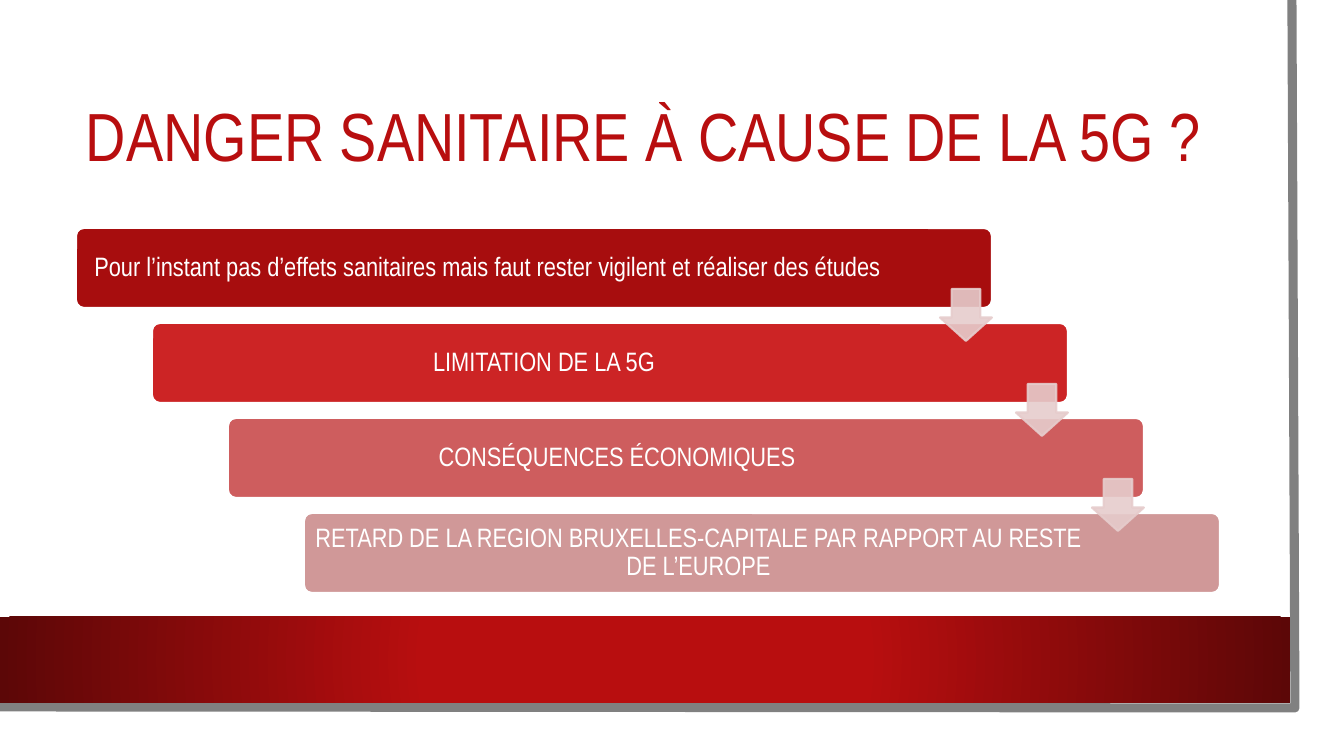
import lxml.etree
import pptx
import pptx.dml.color
import pptx.enum.shapes
import pptx.enum.text
import pptx.oxml
import pptx.oxml.ns
import pptx.util
from dataclasses import dataclass

MSO_SHAPE = pptx.enum.shapes.MSO_SHAPE
PP_ALIGN = pptx.enum.text.PP_ALIGN
EMU_PER_PX = 914400 / 100.8


@dataclass(frozen=True)
class Theme:
    font: str = "Arial Narrow"
    title_size: float = 48.6
    step_size: int = 19
    line_width: float = 1.5
    frame_width: float = 6.5
    red: str = "B80E0F"
    dark_red: str = "5C0707"
    white: str = "FFFFFF"
    grey: str = "808080"
    arrow: str = "E6CCCC"
    steps: tuple = ("A70D0E", "CC2425", "CE5D5E", "D09898")


theme = Theme()
rgb = pptx.dml.color.RGBColor.from_string
prs = pptx.Presentation()
prs.slide_width, prs.slide_height = (round(n * EMU_PER_PX) for n in (1344, 756))
s = prs.slides.add_slide(prs.slide_layouts[5])


def add_box(kind, x, y, w, h, fill, line=None, adj=()):
    sp = s.shapes.add_shape(kind, *(round(n * EMU_PER_PX) for n in (x, y, w, h)))
    sp.shadow.inherit = False
    sp.fill.solid()
    sp.fill.fore_color.rgb = rgb(fill)
    if line:
        sp.line.color.rgb = rgb(line)
        sp.line.width = pptx.util.Pt(theme.line_width)
    else:
        sp.line.fill.background()
    for i, value in enumerate(adj):
        sp.adjustments[i] = value
    return sp


def write(sp, text, *, size, color, align, margins):
    """Margins are left, top, right and bottom in px."""
    tf = sp.text_frame
    tf.word_wrap = True
    tf.auto_size = pptx.enum.text.MSO_AUTO_SIZE.NONE
    tf.vertical_anchor = pptx.enum.text.MSO_ANCHOR.MIDDLE
    tf.margin_left, tf.margin_top, tf.margin_right, tf.margin_bottom = (
        round(n * EMU_PER_PX) for n in margins)
    p = tf.paragraphs[0]
    p.alignment = align
    p.line_spacing = 0.9
    r = p.add_run()
    r.text = text
    r.font.name = theme.font
    r.font.size = pptx.util.Pt(size)
    r.font.color.rgb = rgb(color)


# Grey edge and red band
builder = s.shapes.build_freeform(1292, 0, scale=EMU_PER_PX)
builder.add_line_segments([(1295, 708), (-3, 707)], close=False)
edge = builder.convert_to_shape()
edge.shadow.inherit = False
edge.fill.background()
edge.line.color.rgb = rgb(theme.grey)
edge.line.width = pptx.util.Pt(theme.frame_width)

band = add_box(MSO_SHAPE.RECTANGLE, 0, 617, 1290, 86, theme.red)
gradient = pptx.oxml.parse_xml(
    f'<a:gradFill {pptx.oxml.ns.nsdecls("a")} rotWithShape="1"><a:gsLst>'
    f'<a:gs pos="34000"><a:srgbClr val="{theme.red}"/></a:gs>'
    f'<a:gs pos="100000"><a:srgbClr val="{theme.dark_red}"/></a:gs></a:gsLst>'
    '<a:path path="circle"><a:fillToRect l="50000" t="50000" r="50000" b="50000"/></a:path>'
    '</a:gradFill>')
props = band.element.spPr
props.replace(props.find(pptx.oxml.ns.qn("a:solidFill")), gradient)

# Title
title = s.shapes.title
title.left, title.top, title.width, title.height = (
    round(n * EMU_PER_PX) for n in (76, 76, 1146, 127))
write(title, "DANGER SANITAIRE À CAUSE DE LA 5G ?", size=theme.title_size,
      color=theme.red, align=PP_ALIGN.LEFT, margins=(10, 5, 10, 5))

# Staircase: text and right margin of each step
STEP_X, STEP_Y = 76, 95
steps = [
    ("Pour l’instant pas d’effets sanitaires mais faut rester vigilent et réaliser des études", 101),
    ("LIMITATION DE LA 5G", 140),
    ("CONSÉQUENCES ÉCONOMIQUES", 146),
    ("RETARD DE LA REGION BRUXELLES-CAPITALE PAR RAPPORT AU RESTE DE L’EUROPE", 135),
]
for i, (text, right) in enumerate(steps):
    bar = add_box(MSO_SHAPE.ROUNDED_RECTANGLE, 76 + i * STEP_X, 228 + i * STEP_Y, 916, 80,
                  theme.steps[i], theme.white, adj=[0.1])
    write(bar, text, size=theme.step_size, color=theme.white,
          align=PP_ALIGN.CENTER, margins=(8, 8, right, 8))

for i in range(len(steps) - 1):
    arrow = add_box(MSO_SHAPE.DOWN_ARROW, 940 + i * STEP_X, 289 + i * STEP_Y, 52, 52,
                    theme.arrow, theme.arrow, adj=[0.55, 0.45])
    for color in arrow.element.spPr.iter(pptx.oxml.ns.qn("a:srgbClr")):
        lxml.etree.SubElement(color, pptx.oxml.ns.qn("a:alpha"), val="90000")

prs.save("out.pptx")
